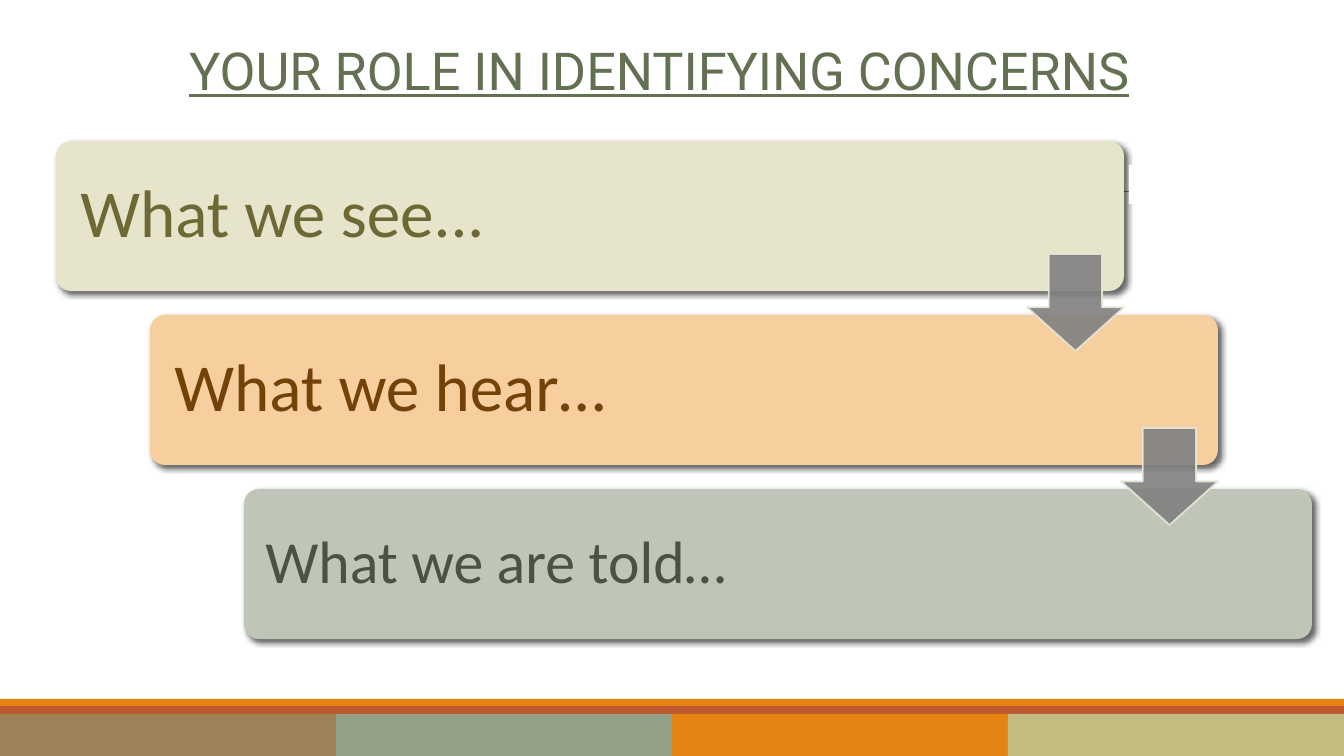
from dataclasses import dataclass

from lxml import etree
from pptx import Presentation
from pptx import util as u
from pptx.dml.color import RGBColor
from pptx.enum import shapes, text
from pptx.oxml import parse_xml
from pptx.oxml.ns import nsdecls, qn

SLIDE_WIDTH, SLIDE_HEIGHT = 1344, 756
EMU_PER_PX = 914400 / 134.4


@dataclass(frozen=True)
class Theme:
    heading_font: str = "Roboto"
    body_font: str = "Calibri"
    title_size: int = 28
    title_color: str = "637052"
    paper: str = "FFFFFF"
    rule: str = "808080"
    arrow: str = "808080"
    arrow_edge: str = "E9E7D8"
    rust: str = "BD582C"
    orange: str = "E48312"
    bands: tuple = ("9B8357", "94A088", "E48312", "C2BC80")


THEME = Theme()

STEPS = [
    ("What we see...", "E7E4CC", "6D6834", 36, 20),
    ("What we hear…", "F7CE9D", "724209", 36, 20),
    ("What we are told…", "BFC6B8", "4A5242", 32, 17),
]


def px(length):
    return u.Emu(round(length * EMU_PER_PX))


def rgb(color):
    return RGBColor.from_string(color)


def add_block(slide, box, color, kind=shapes.MSO_SHAPE.RECTANGLE):
    shape = slide.shapes.add_shape(kind, *map(px, box))
    shape.shadow.inherit = False
    shape.fill.solid()
    shape.fill.fore_color.rgb = rgb(color)
    shape.line.fill.background()
    return shape


def format_run(run, font, size, color):
    run.font.name = font
    run.font.size = u.Pt(size)
    run.font.color.rgb = rgb(color)


def add_drop_shadow(shape):
    effects = shape._element.spPr.find(qn("a:effectLst"))
    effects.append(parse_xml(
        f'<a:outerShdw {nsdecls("a")} blurRad="38100" dist="25400" dir="2700000" '
        'algn="tl" rotWithShape="0"><a:srgbClr val="000000">'
        '<a:alpha val="60000"/></a:srgbClr></a:outerShdw>'))


def set_opacity(shape, percent):
    for color in shape._element.spPr.iter(qn("a:srgbClr")):
        etree.SubElement(color, qn("a:alpha"), val=str(percent * 1000))


def draw_footer(slide, box):
    left, top, width, height = box
    add_block(slide, (left, top + 7, width, height - 7), THEME.rust)
    add_block(slide, (left, top, width, 7), THEME.orange)
    band_width = width // len(THEME.bands)
    for index, color in enumerate(THEME.bands):
        add_block(slide, (left + index * band_width, top + 15, band_width, height - 15), color)


def draw_rule(slide, box):
    left, top, width, height = box
    line = slide.shapes.add_connector(
        shapes.MSO_CONNECTOR.STRAIGHT, px(left), px(top), px(left + width), px(top + height))
    line.line.color.rgb = rgb(THEME.rule)
    line.line.width = u.Pt(0.5)
    etree.SubElement(line._element.spPr, qn("a:effectLst"))


def draw_title(slide, box, wording):
    title = slide.shapes.title
    title.left, title.top, title.width, title.height = map(px, box)
    frame = title.text_frame
    frame.text = wording
    frame.word_wrap = True
    frame.auto_size = text.MSO_AUTO_SIZE.NONE
    frame.vertical_anchor = text.MSO_ANCHOR.TOP
    paragraph = frame.paragraphs[0]
    paragraph.alignment = text.PP_ALIGN.CENTER
    run = paragraph.runs[0]
    format_run(run, THEME.heading_font, THEME.title_size, THEME.title_color)
    run.font.underline = True


def draw_card(slide, box, step):
    wording, fill, color, size, margin = step
    card = add_block(slide, box, fill, shapes.MSO_SHAPE.ROUNDED_RECTANGLE)
    card.adjustments[0] = 0.1
    add_drop_shadow(card)
    frame = card.text_frame
    frame.text = wording
    frame.word_wrap = True
    frame.vertical_anchor = text.MSO_ANCHOR.MIDDLE
    frame.margin_left = frame.margin_right = px(margin)
    frame.margin_top = frame.margin_bottom = px(margin)
    paragraph = frame.paragraphs[0]
    paragraph.alignment = text.PP_ALIGN.LEFT
    paragraph.line_spacing = 0.9
    format_run(paragraph.runs[0], THEME.body_font, size, color)


def draw_arrow(slide, box):
    arrow = add_block(slide, box, THEME.arrow, shapes.MSO_SHAPE.DOWN_ARROW)
    arrow.adjustments[0] = 0.45
    arrow.adjustments[1] = 0.55
    arrow.adjustments[0], arrow.adjustments[1] = 0.55, 0.45
    arrow.line.color.rgb = rgb(THEME.arrow_edge)
    arrow.line.width = u.Pt(1)
    set_opacity(arrow, 90)


def draw_staircase(slide, box, steps):
    left, top, width, height = box
    card_width, card_height, arrow_size = 1068, 150, 97
    step_x = (width - card_width) // (len(steps) - 1)
    step_y = (height - card_height) // (len(steps) - 1)
    for index, step in enumerate(steps):
        draw_card(slide, (left + index * step_x, top + index * step_y,
                          card_width, card_height), step)
    for index in range(len(steps) - 1):
        draw_arrow(slide, (left + index * step_x + card_width - arrow_size,
                           top + index * step_y + 113, arrow_size, arrow_size))


def main():
    presentation = Presentation()
    presentation.slide_width = px(SLIDE_WIDTH)
    presentation.slide_height = px(SLIDE_HEIGHT)
    slide = presentation.slides.add_slide(presentation.slide_layouts[5])
    slide.background.fill.solid()
    slide.background.fill.fore_color.rgb = rgb(THEME.paper)
    draw_footer(slide, (0, 699, SLIDE_WIDTH, 57))
    draw_rule(slide, (132, 192, 1098, 0))
    draw_staircase(slide, (56, 141, 1256, 498), STEPS)
    draw_title(slide, (128, 31, 1062, 77), "YOUR ROLE IN IDENTIFYING CONCERNS")
    add_block(slide, (1129, 165, 116, 39), THEME.paper)
    presentation.save("out.pptx")


if __name__ == "__main__":
    main()
